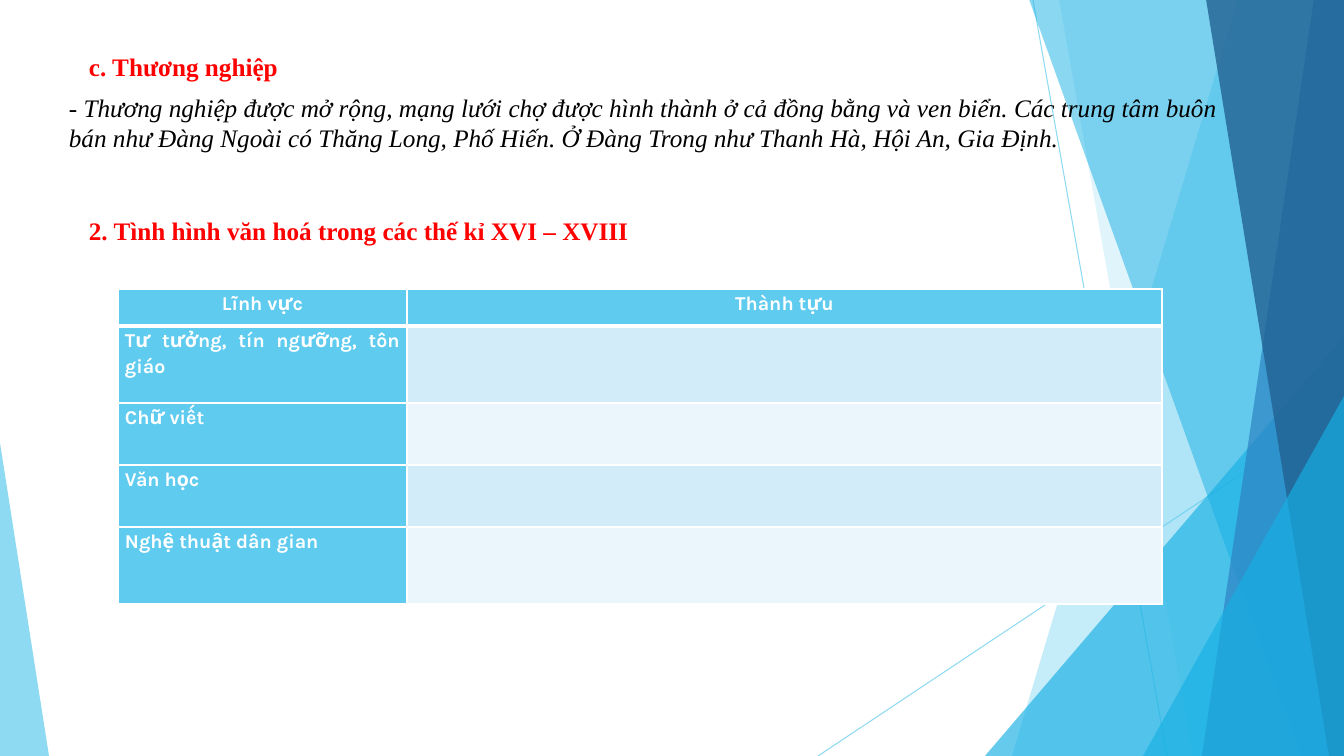
from lxml import etree
from pptx import Presentation
from pptx.dml.color import RGBColor
from pptx.enum.shapes import MSO_CONNECTOR, MSO_SHAPE
from pptx.enum.text import PP_ALIGN
from pptx.oxml.ns import qn
from pptx.util import Emu, Pt

EMU_PER_PX = 914400 / 100.8
WIDTH, HEIGHT = 1344, 756

WHITE = RGBColor(0xFF, 0xFF, 0xFF)
BLACK = RGBColor(0x00, 0x00, 0x00)
RED = RGBColor(0xFF, 0x00, 0x00)
SKY = RGBColor(0x5F, 0xCB, 0xEF)
CYAN = RGBColor(0x17, 0xB0, 0xE4)
BLUE = RGBColor(0x2E, 0x83, 0xC3)
NAVY = RGBColor(0x22, 0x62, 0x92)
BAND_DARK = RGBColor(0xD2, 0xEC, 0xF9)
BAND_LIGHT = RGBColor(0xEA, 0xF6, 0xFC)

HEADERS = ["Lĩnh vực", "Thành tựu"]
FIELDS = ["Tư tưởng, tín ngưỡng, tôn giáo", "Chữ viết", "Văn học", "Nghệ thuật dân gian"]
COLUMN_WIDTHS = [289, 755]
ROW_HEIGHTS = [37, 77, 62, 62, 77]


def px(length):
    """Turn pixels into EMU."""
    return Emu(round(length * EMU_PER_PX))


def set_opacity(shape, percent):
    """Make every colour of a shape partly transparent."""
    for color in shape._element.spPr.iter(qn("a:srgbClr")):
        etree.SubElement(color, qn("a:alpha"), val=str(percent * 1000))


def paint(shape, color, opacity):
    """Give a shape a translucent fill without line or shadow."""
    shape.shadow.inherit = False
    shape.fill.solid()
    shape.fill.fore_color.rgb = color
    shape.line.fill.background()
    set_opacity(shape, opacity)


def add_ray(slide, start, end):
    """Draw a thin translucent line."""
    points = [px(value) for value in (*start, *end)]
    ray = slide.shapes.add_connector(MSO_CONNECTOR.STRAIGHT, *points)
    ray.line.color.rgb = SKY
    ray.line.width = Pt(0.75)
    set_opacity(ray, 70)
    etree.SubElement(ray._element.spPr, qn("a:effectLst"))


def add_panel(slide, box, top_offset, bottom_offset, color, opacity):
    """Draw a panel with a slanted left edge and a straight right edge."""
    left, top, width, height = box
    right, bottom = left + width, top + height
    builder = slide.shapes.build_freeform(left + top_offset, top, scale=EMU_PER_PX)
    builder.add_line_segments([(right, top), (right, bottom), (left + bottom_offset, bottom)])
    paint(builder.convert_to_shape(), color, opacity)


def add_triangle(slide, box, apex, color, opacity):
    """Draw a right-angled triangle whose apex is at the left (0) or right (1)."""
    triangle = slide.shapes.add_shape(MSO_SHAPE.ISOSCELES_TRIANGLE, *map(px, box))
    triangle.adjustments[0] = apex
    paint(triangle, color, opacity)


def add_facets(slide, box):
    """Draw the decorative facets along the edges of the box."""
    left, top, width, height = box
    right, bottom = left + width, top + height

    def panel(panel_width, top_offset, bottom_offset, color, opacity):
        panel_box = (right - panel_width, top - 1, panel_width, height + 1)
        add_panel(slide, panel_box, top_offset, bottom_offset, color, opacity)

    def corner(corner_width, corner_height):
        corner_box = (right - corner_width, bottom - corner_height, corner_width, corner_height)
        add_triangle(slide, corner_box, 1, CYAN, 66)

    add_ray(slide, (right - 311, top), (right - 177, bottom))
    add_ray(slide, (right, top + 406), (right - 526, bottom))
    panel(332, 226, 0, SKY, 36)
    panel(285, 0, 134, SKY, 20)
    corner(359, 420)
    panel(315, 0, 272, CYAN, 50)
    panel(142, 112, 0, BLUE, 70)
    panel(138, 0, 123, NAVY, 80)
    corner(201, 360)
    add_triangle(slide, (left, bottom - 313, 49, 313), 0, SKY, 70)


def write_text(frame, text, *, color, size=18, font="Times New Roman", bold=False,
               italic=False, align=PP_ALIGN.LEFT, line_spacing=None, space_after=None):
    """Write one formatted paragraph into a text frame."""
    paragraph = frame.paragraphs[0]
    paragraph.alignment = align
    paragraph.line_spacing = line_spacing
    paragraph.space_after = space_after
    run = paragraph.add_run()
    run.text = text
    run.font.name = font
    run.font.size = Pt(size)
    run.font.bold = bold
    run.font.italic = italic
    run.font.color.rgb = color


def add_text(slide, box, text, wrap=False, **text_format):
    """Place a text box."""
    frame = slide.shapes.add_textbox(*map(px, box)).text_frame
    frame.word_wrap = wrap
    write_text(frame, text, **text_format)


def add_lesson(slide, box):
    """Place both headings and the paragraph on trade."""
    left, top, width, height = box
    add_text(slide, (left + 20, top, 218, 40), "c. Thương nghiệp", color=RED, bold=True)
    add_text(
        slide, (left, top + 41, width, 102),
        "- Thương nghiệp được mở rộng, mạng lưới chợ được hình thành ở cả đồng bằng và ven biển. "
        "Các trung tâm buôn bán như Đàng Ngoài có Thăng Long, Phố Hiến. "
        "Ở Đàng Trong như Thanh Hà, Hội An, Gia Định.",
        wrap=True, color=BLACK, italic=True)
    add_text(slide, (left + 20, top + height - 40, 566, 40),
             "2. Tình hình văn hoá trong các thế kỉ XVI – XVIII", color=RED, bold=True)


def set_borders(cell, top_width, bottom_width):
    """Draw white borders around a cell."""
    properties = cell._tc.get_or_add_tcPr()
    for side, width in (("L", 1), ("R", 1), ("T", top_width), ("B", bottom_width)):
        line = etree.SubElement(properties, qn(f"a:ln{side}"), w=str(Pt(width)))
        fill = etree.SubElement(line, qn("a:solidFill"))
        etree.SubElement(fill, qn("a:srgbClr"), val=str(WHITE))


def add_culture_table(slide, box):
    """Place the table of cultural fields and achievements."""
    rows = [HEADERS] + [[field, ""] for field in FIELDS]
    table = slide.shapes.add_table(len(rows), len(HEADERS), *map(px, box)).table
    for column, width in zip(table.columns, COLUMN_WIDTHS):
        column.width = px(width)
    for row, height in zip(table.rows, ROW_HEIGHTS):
        row.height = px(height)
    for row_index, texts in enumerate(rows):
        for column_index, text in enumerate(texts):
            cell = table.cell(row_index, column_index)
            set_borders(cell, 3 if row_index == 1 else 1, 3 if row_index == 0 else 1)
            cell.fill.solid()
            band = BAND_DARK if row_index % 2 else BAND_LIGHT
            cell.fill.fore_color.rgb = SKY if text else band
            if text:
                cell.margin_left = cell.margin_right = px(7)
                cell.margin_top = cell.margin_bottom = 0
                write_text(cell.text_frame, text, color=WHITE, size=14, font="Karla", bold=True,
                           align=PP_ALIGN.JUSTIFY if row_index else PP_ALIGN.CENTER,
                           line_spacing=1.15, space_after=Pt(10))


def main():
    """Build and save the slide."""
    presentation = Presentation()
    presentation.slide_width, presentation.slide_height = px(WIDTH), px(HEIGHT)
    slide = presentation.slides.add_slide(presentation.slide_layouts[6])
    add_facets(slide, (0, 0, WIDTH, HEIGHT))
    add_lesson(slide, (59, 46, 1205, 204))
    add_culture_table(slide, (118, 289, sum(COLUMN_WIDTHS), sum(ROW_HEIGHTS)))
    presentation.save("out.pptx")


if __name__ == "__main__":
    main()
